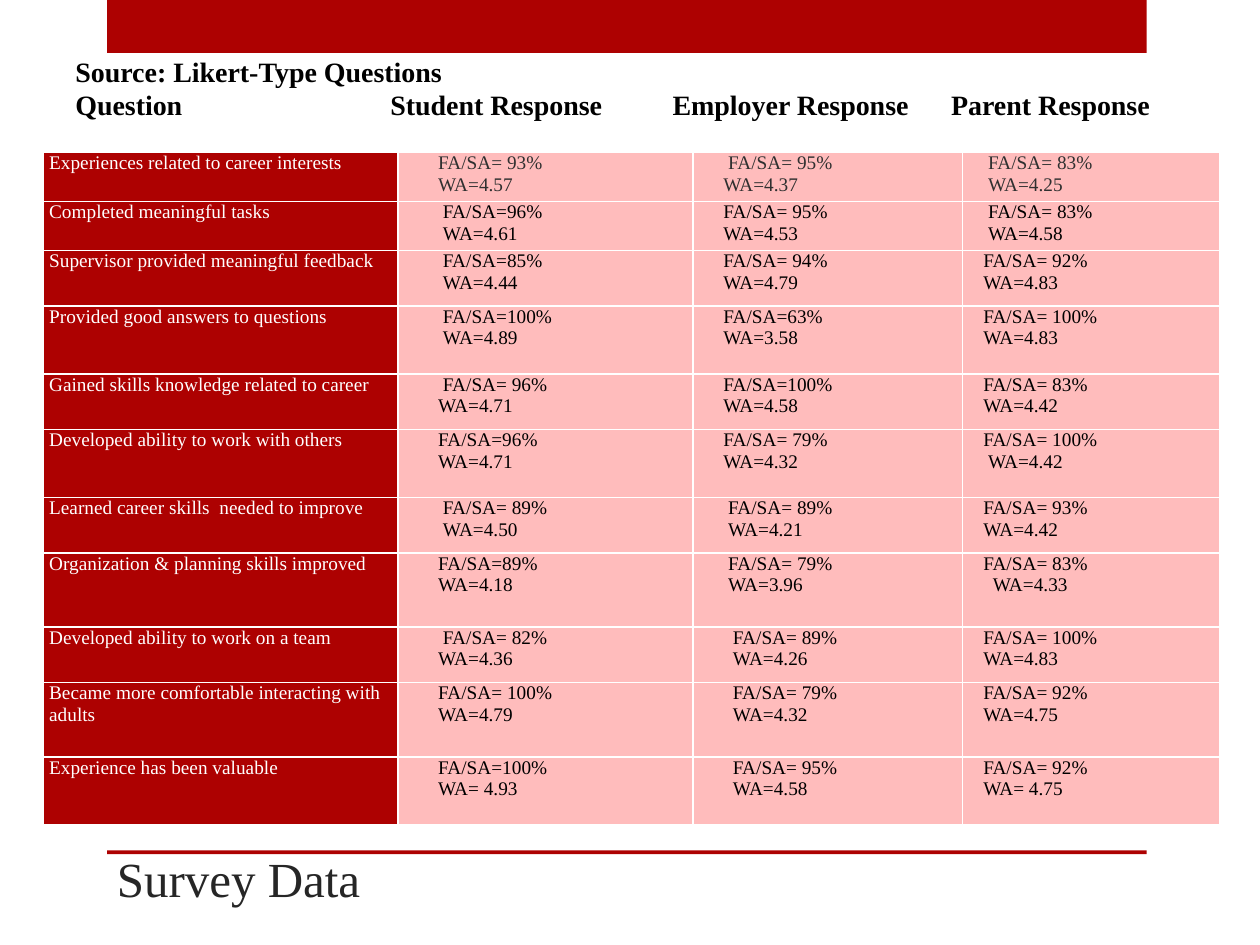
from lxml.etree import SubElement
from pptx import Presentation
from pptx.dml.color import RGBColor
from pptx.enum.shapes import MSO_SHAPE as Shape
from pptx.enum.text import MSO_ANCHOR as Anchor
from pptx.oxml.ns import qn
from pptx.util import Inches, Pt

RED = RGBColor(0xAD, 0x01, 0x01)
PINK = RGBColor(0xFF, 0xBC, 0xBC)
WHITE = RGBColor(0xFF, 0xFF, 0xFF)
BLACK = RGBColor(0, 0, 0)
CHARCOAL = RGBColor(0x26, 0x26, 0x26)
GREY = RGBColor(0x30, 0x30, 0x30)
FONT = "Times New Roman"

COLUMN_WIDTHS = [2.82, 2.34, 2.14, 2.04]
INDENT_STEP = 2.75  # points
HEADING_TABS = [2.5, 4.74, 6.95]  # inches from the text's left edge
HEADINGS = ["Question", "Student Response", "Employer Response", "Parent Response"]

# Row height, question, then student, employer and parent responses,
# and the indent steps of the two lines in each response
SURVEY = [
    (0.39, "Experiences related to career interests",
     ["FA/SA= 93%", "WA=4.57", "FA/SA= 95%", "WA=4.37", "FA/SA= 83%", "WA=4.25"],
     [7, 7, 6, 5, 4, 4]),
    (0.39, "Completed meaningful tasks",
     ["FA/SA=96%", "WA=4.61", "FA/SA= 95%", "WA=4.53", "FA/SA= 83%", "WA=4.58"],
     [8, 8, 5, 5, 4, 4]),
    (0.44, "Supervisor provided meaningful feedback",
     ["FA/SA=85%", "WA=4.44", "FA/SA= 94%", "WA=4.79", "FA/SA= 92%", "WA=4.83"],
     [8, 8, 5, 5, 3, 3]),
    (0.54, "Provided good answers to questions",
     ["FA/SA=100%", "WA=4.89", "FA/SA=63%", "WA=3.58", "FA/SA= 100%", "WA=4.83"],
     [8, 8, 5, 5, 3, 3]),
    (0.44, "Gained skills knowledge related to career",
     ["FA/SA= 96%", "WA=4.71", "FA/SA=100%", "WA=4.58", "FA/SA= 83%", "WA=4.42"],
     [8, 7, 5, 5, 3, 3]),
    (0.54, "Developed ability to work with others",
     ["FA/SA=96%", "WA=4.71", "FA/SA= 79%", "WA=4.32", "FA/SA= 100%", "WA=4.42"],
     [7, 7, 5, 5, 3, 4]),
    (0.44, "Learned career skills  needed to improve",
     ["FA/SA= 89%", "WA=4.50", "FA/SA= 89%", "WA=4.21", "FA/SA= 93%", "WA=4.42"],
     [8, 8, 6, 6, 3, 3]),
    (0.59, "Organization & planning skills improved",
     ["FA/SA=89%", "WA=4.18", "FA/SA= 79%", "WA=3.96", "FA/SA= 83%", "WA=4.33"],
     [7, 7, 6, 6, 3, 5]),
    (0.44, "Developed ability to work on a team",
     ["FA/SA= 82%", "WA=4.36", "FA/SA= 89%", "WA=4.26", "FA/SA= 100%", "WA=4.83"],
     [8, 7, 7, 7, 3, 3]),
    (0.59, "Became more comfortable interacting with adults",
     ["FA/SA= 100%", "WA=4.79", "FA/SA= 79%", "WA=4.32", "FA/SA= 92%", "WA=4.75"],
     [7, 7, 7, 7, 3, 3]),
    (0.54, "Experience has been valuable",
     ["FA/SA=100%", "WA= 4.93", "FA/SA= 95%", "WA=4.58", "FA/SA= 92%", "WA= 4.75"],
     [7, 7, 7, 7, 3, 3]),
]


def add_bar(slide, top, height):
    bar = slide.shapes.add_shape(
        Shape.RECTANGLE, Inches(0.85), Inches(top), Inches(8.25), Inches(height))
    bar.shadow.inherit = False
    bar.fill.solid()
    bar.fill.fore_color.rgb = RED
    bar.line.fill.background()


def write_lines(frame, lines, size, color, bold=False):
    """Write one paragraph per line and return the paragraphs."""
    frame.text = "\n".join(lines)
    for paragraph in frame.paragraphs:
        font = paragraph.font
        font.name, font.size, font.bold = FONT, Pt(size), bold
        font.color.rgb = color
    return frame.paragraphs


def add_text(slide, left, top, width, height, lines, size, color, anchor, bold=False):
    box = slide.shapes.add_textbox(
        Inches(left), Inches(top), Inches(width), Inches(height))
    box.text_frame.word_wrap = True
    box.text_frame.vertical_anchor = anchor
    return write_lines(box.text_frame, lines, size, color, bold)


def set_tabs(paragraph, stops):
    # Tab stops come before the default run properties in the schema
    properties = paragraph._p.get_or_add_pPr()
    tabs = SubElement(properties, qn("a:tabLst"))
    properties.insert(0, tabs)
    for stop in stops:
        SubElement(tabs, qn("a:tab"), pos=str(Inches(stop)), algn="l")


def add_borders(cell):
    properties = cell._tc.get_or_add_tcPr()
    for index, side in enumerate(("a:lnL", "a:lnR", "a:lnT", "a:lnB")):
        line = SubElement(properties, qn(side), w=str(Pt(1)))
        fill = SubElement(line, qn("a:solidFill"))
        SubElement(fill, qn("a:srgbClr"), val=str(WHITE))
        properties.insert(index, line)


def fill_cell(cell, lines, fill, color, indents):
    cell.margin_left = cell.margin_right = Inches(0.05)
    cell.margin_top = cell.margin_bottom = 0
    cell.fill.solid()
    cell.fill.fore_color.rgb = fill
    add_borders(cell)
    paragraphs = write_lines(cell.text_frame, lines, 11, color)
    for paragraph, steps in zip(paragraphs, indents):
        paragraph._p.get_or_add_pPr().set("marL", str(Pt(steps * INDENT_STEP)))


def add_survey_table(slide):
    heights = [height for height, *_ in SURVEY]
    table = slide.shapes.add_table(
        len(SURVEY), len(COLUMN_WIDTHS), Inches(0.34), Inches(1.21),
        Inches(sum(COLUMN_WIDTHS)), Inches(sum(heights))).table
    table.first_row = table.horz_banding = False
    for column, width in zip(table.columns, COLUMN_WIDTHS):
        column.width = Inches(width)
    for index, (height, question, responses, indents) in enumerate(SURVEY):
        table.rows[index].height = Inches(height)
        fill_cell(table.cell(index, 0), [question], RED, WHITE, [0])
        response_color = BLACK if index else GREY
        for group in range(3):
            pair = slice(2 * group, 2 * group + 2)
            fill_cell(table.cell(index, group + 1), responses[pair],
                      PINK, response_color, indents[pair])


def main():
    deck = Presentation()
    deck.slide_width, deck.slide_height = Inches(10), Inches(7.5)
    slide = deck.slides.add_slide(deck.slide_layouts[6])

    # Top band and rule above the title
    add_bar(slide, 0, 0.42)
    add_bar(slide, 6.75, 0.03)

    # Title
    add_text(slide, 0.83, 6.58, 7.42, 0.67, ["Survey Data"], 28, CHARCOAL, Anchor.BOTTOM)

    # Survey results with their column headings
    add_survey_table(slide)
    _, headings = add_text(
        slide, 0.5, 0.38, 8.8, 0.75,
        ["Source: Likert-Type Questions", "\t".join(HEADINGS)],
        16, BLACK, Anchor.TOP, bold=True)
    set_tabs(headings, HEADING_TABS)

    deck.save("out.pptx")


if __name__ == "__main__":
    main()
